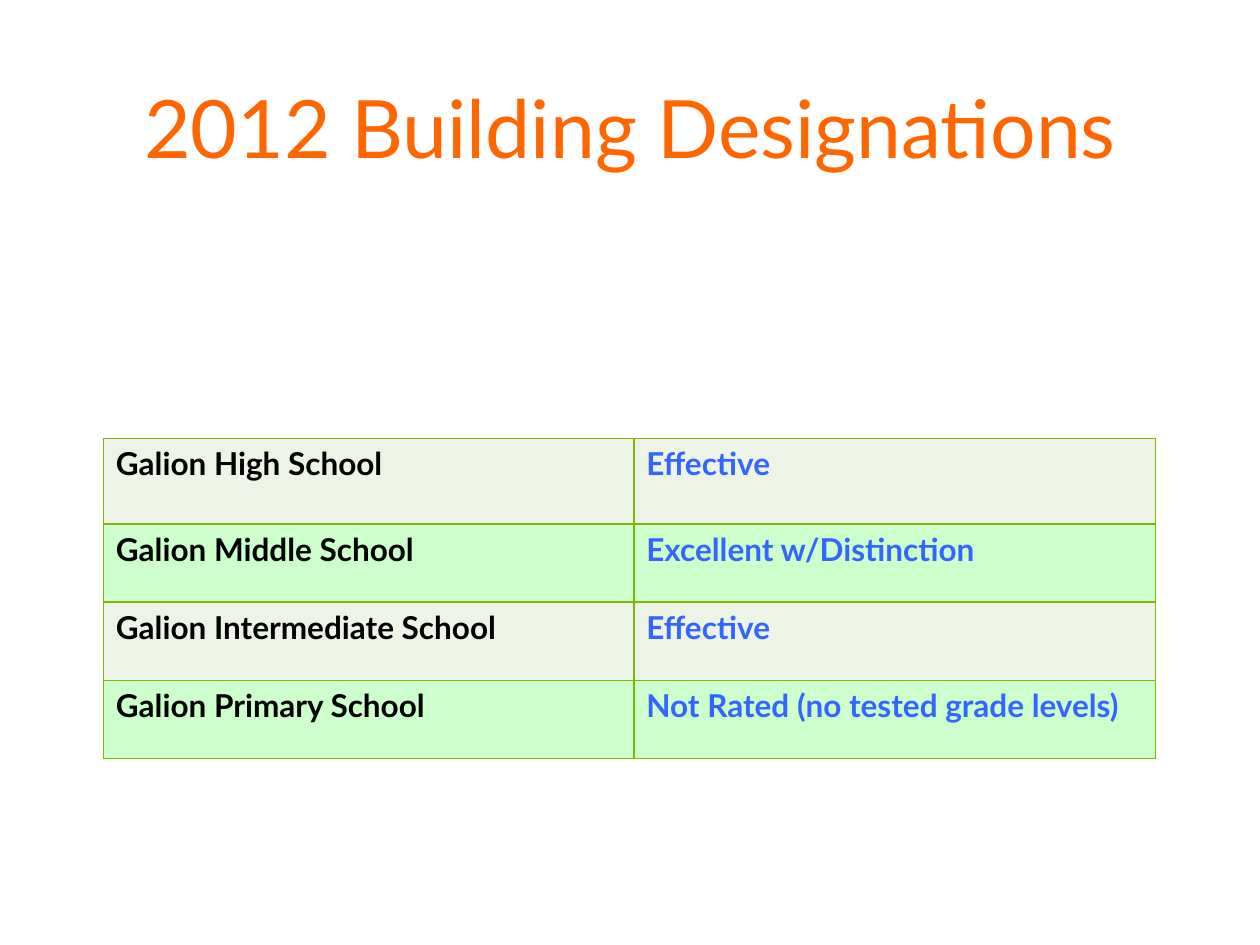
from lxml import etree
from pptx import Presentation
from pptx.dml.color import RGBColor
from pptx.enum.text import MSO_ANCHOR, PP_ALIGN
from pptx.oxml.ns import qn
from pptx.util import Inches, Pt

FONT = "Lato"
COLORS = {
    "title": "FF6600",
    "school": "000000",
    "rating": "3366FF",
    "odd_row": "EDF3E7",
    "even_row": "CCFFCC",
    "border": "80B606",
}
DESIGNATIONS = [
    ("Galion High School", "Effective"),
    ("Galion Middle School", "Excellent w/Distinction"),
    ("Galion Intermediate School", "Effective"),
    ("Galion Primary School", "Not Rated (no tested grade levels)"),
]


def rgb(name):
    return RGBColor.from_string(COLORS[name])


def set_text(tf, text, size, color, bold=False):
    tf.text = text
    font = tf.paragraphs[0].runs[0].font
    font.name, font.size, font.bold = FONT, Pt(size), bold
    font.color.rgb = rgb(color)


def set_borders(cell, color, width):
    # Border lines must come before the fill in the cell properties
    tc_pr = cell._tc.get_or_add_tcPr()
    for i, side in enumerate(("a:lnL", "a:lnR", "a:lnT", "a:lnB")):
        ln = etree.Element(qn(side), w=str(Pt(width)))
        fill = etree.SubElement(ln, qn("a:solidFill"))
        etree.SubElement(fill, qn("a:srgbClr"), val=COLORS[color])
        tc_pr.insert(i, ln)


def add_title(slide, left, top, width, height):
    tf = slide.shapes.add_textbox(left, top, width, height).text_frame
    tf.word_wrap = True
    tf.vertical_anchor = MSO_ANCHOR.MIDDLE
    set_text(tf, "2012 Building Designations", 46, "title")
    tf.paragraphs[0].alignment = PP_ALIGN.CENTER


def add_designations(slide, left, top, width, height):
    table = slide.shapes.add_table(
        len(DESIGNATIONS), 2, left, top, width, height).table
    table.first_row = table.horz_banding = False

    # The first column and the first row are slightly larger
    table.columns[0].width = Inches(4.21)
    table.columns[1].width = width - Inches(4.21)
    for row in table.rows:
        row.height = Inches(0.62)
    table.rows[0].height = height - 3 * Inches(0.62)

    for r, texts in enumerate(DESIGNATIONS):
        for c, (text, color) in enumerate(zip(texts, ("school", "rating"))):
            cell = table.cell(r, c)
            set_text(cell.text_frame, text, 18, color, bold=True)
            cell.fill.solid()
            cell.fill.fore_color.rgb = rgb("even_row" if r % 2 else "odd_row")
            set_borders(cell, "border", 1)


def main():
    prs = Presentation()
    prs.slide_width, prs.slide_height = Inches(10), Inches(7.5)
    slide = prs.slides.add_slide(prs.slide_layouts[6])
    add_title(slide, Inches(0.5), Inches(0.38), Inches(9), Inches(1.25))
    add_designations(slide, Inches(0.82), Inches(3.48), Inches(8.35), Inches(2.54))
    prs.save("out.pptx")


if __name__ == "__main__":
    main()
